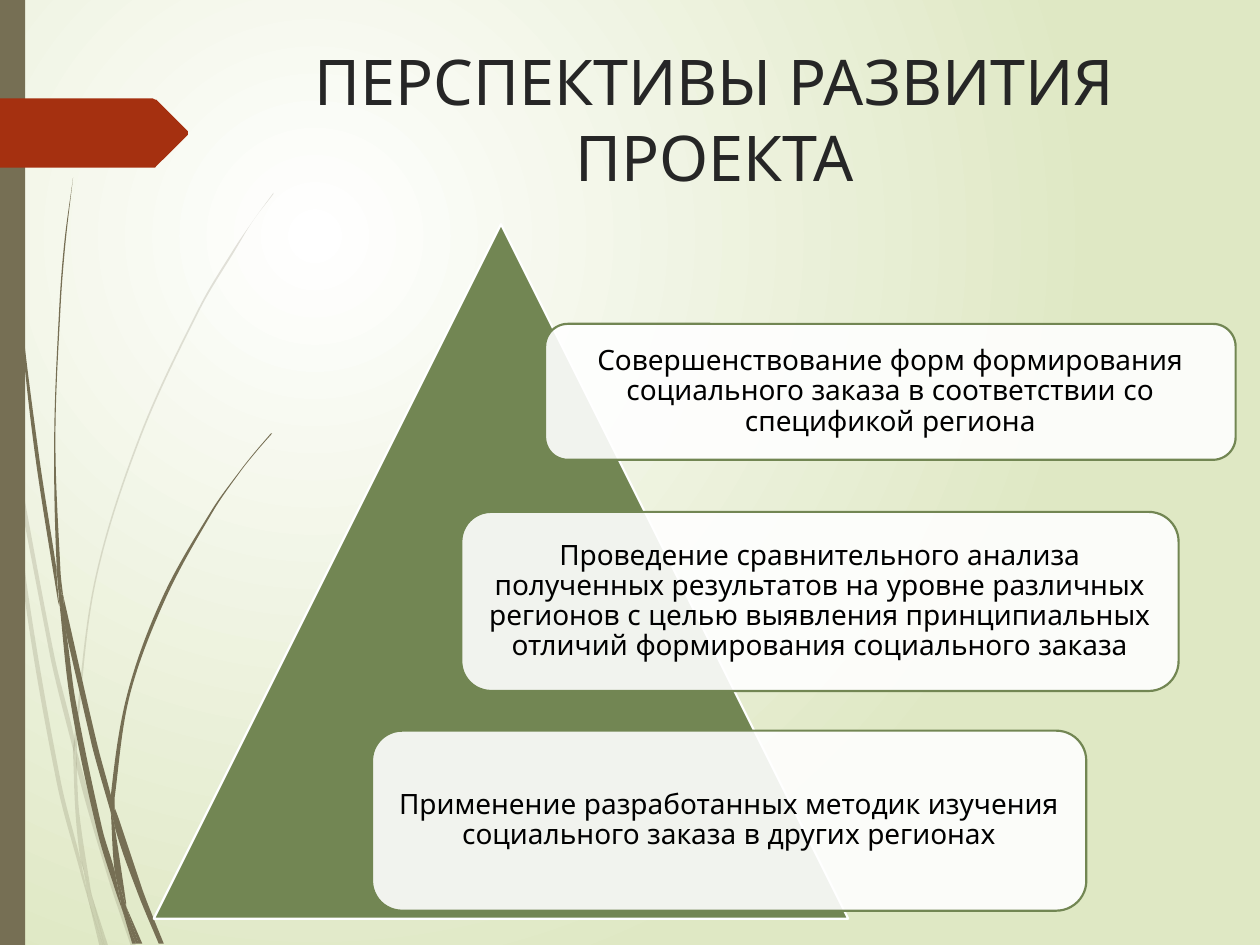
from dataclasses import dataclass
from math import hypot
from typing import Optional

from lxml.etree import Element, SubElement
from pptx import Presentation
from pptx.dml.color import RGBColor
from pptx.enum.shapes import MSO_SHAPE
from pptx.enum.text import MSO_ANCHOR, MSO_AUTO_SIZE, PP_ALIGN
from pptx.oxml.ns import qn
from pptx.util import Cm, Pt

WHITE = RGBColor(0xFF, 0xFF, 0xFF)
BLACK = RGBColor(0x00, 0x00, 0x00)
INK = RGBColor(0x26, 0x26, 0x26)
GREEN = RGBColor(0x72, 0x86, 0x53)
PALE_GREEN = RGBColor(0xDF, 0xE8, 0xC4)
BROWN = RGBColor(0x76, 0x6F, 0x54)
RUST = RGBColor(0xA5, 0x30, 0x10)
FONT = "Quicksand"
FINE = 10
OUTLINE_UNIT = Cm(0.0254)
SMOOTH_TURN = 0.85

Point = tuple[float, float]


@dataclass(frozen=True)
class Box:
    left: float
    top: float
    width: float
    height: float

    def lengths(self) -> tuple[Cm, Cm, Cm, Cm]:
        return Cm(self.left), Cm(self.top), Cm(self.width), Cm(self.height)


@dataclass(frozen=True)
class Card:
    box: Box
    wording: str


PALE_GRASS = [
    [(8, 350), (6, 322), (0, 282), (0, 299), (7, 344)],
    [(40, 522), (59, 599), (59, 586), (43, 520), (10, 345), (12, 376)],
    [(64, 607), (61, 596), (61, 610), (85, 694), (104, 751), (108, 751), (88, 692)],
    [(83, 751), (86, 751), (73, 711)],
    [(64, 683), (48, 619), (22, 469), (12, 376), (8, 350), (19, 470), (45, 621), (64, 693),
     (70, 714), (69, 707)],
    [(58, 599), (60, 646), (64, 683), (67, 692), (73, 711), (72, 706), (63, 646), (61, 610),
     (61, 608)],
    [(61, 584), (76, 462), (111, 349), (159, 245), (187, 198), (201, 175), (217, 154),
     (217, 153), (201, 175), (186, 197), (158, 244), (110, 348), (75, 461), (59, 584),
     (59, 586), (61, 596)],
    [(70, 714), (79, 751), (82, 751)],
    [(61, 608), (61, 610), (61, 596), (59, 586), (58, 599)],
    [(67, 692), (65, 683), (69, 707), (70, 714), (82, 751), (83, 751), (73, 711)],
]
DARK_GRASS = [
    [(5, 110), (14, 233), (27, 355), (46, 477), (47, 481), (45, 457), (45, 453), (30, 355),
     (15, 232), (6, 109), (4, 48), (3, 0), (2, 0), (3, 48)],
    [(73, 592), (88, 645), (88, 633), (88, 631), (77, 590), (50, 472), (53, 505)],
    [(94, 649), (91, 641), (91, 656), (109, 708), (126, 749), (130, 749), (113, 706)],
    [(91, 691), (81, 657), (60, 556), (53, 505), (47, 477), (56, 557), (77, 659), (92, 708),
     (97, 722), (96, 717)],
    [(50, 472), (48, 453), (44, 349), (48, 245), (52, 193), (58, 141), (51, 193), (47, 245),
     (43, 349), (45, 449), (49, 472)],
    [(110, 749), (113, 749), (100, 719)],
    [(47, 477), (53, 505), (50, 472), (49, 472), (45, 449), (45, 453)],
    [(91, 633), (103, 552), (131, 476), (169, 406), (191, 374), (203, 359), (216, 344),
     (215, 344), (203, 358), (191, 373), (168, 405), (129, 474), (101, 551), (88, 631),
     (91, 641)],
    [(97, 722), (105, 749), (108, 749)],
    [(88, 645), (91, 691), (96, 706), (100, 719), (100, 716), (91, 656), (90, 651)],
    [(88, 645), (90, 651), (91, 656), (91, 641), (88, 631), (88, 633)],
    [(96, 706), (91, 691), (96, 717), (97, 722), (108, 749), (110, 749), (100, 719)],
]
RIBBON = [(149, 107), (124, 132), (123, 133), (121, 133), (111, 133), (0, 133), (0, 78),
          (111, 78), (121, 78), (123, 79), (124, 79), (149, 104)]

CARDS = [
    Card(Box(7.5, 14.73, 14.4, 3.63),
         "Применение разработанных методик изучения социального заказа в других регионах"),
    Card(Box(9.3, 10.32, 14.46, 3.61),
         "Проведение сравнительного анализа полученных результатов на уровне различных "
         "регионов с целью выявления принципиальных отличий формирования социального заказа"),
    Card(Box(10.99, 6.53, 13.92, 2.74),
         "Совершенствование форм формирования социального заказа в соответствии со "
         "спецификой региона"),
]


def paint(shape, fill: RGBColor, outline: Optional[RGBColor] = None, opacity: int = 100) -> None:
    shape.shadow.inherit = False
    shape.fill.solid()
    shape.fill.fore_color.rgb = fill
    if opacity < 100:
        color = shape.fill._xPr.find(qn("a:solidFill"))[0]
        SubElement(color, qn("a:alpha")).set("val", str(opacity * 1000))
    if outline is None:
        shape.line.fill.background()
    else:
        shape.line.color.rgb = outline
        shape.line.width = Pt(1.25)


def handle(knot: Point, target: Point, behind: Point) -> Point:
    ahead_x, ahead_y = target[0] - knot[0], target[1] - knot[1]
    back_x, back_y = knot[0] - behind[0], knot[1] - behind[1]
    chord, back = hypot(ahead_x, ahead_y), hypot(back_x, back_y)
    if ahead_x * back_x + ahead_y * back_y < SMOOTH_TURN * chord * back:
        return knot[0] + ahead_x / 3, knot[1] + ahead_y / 3
    run_x, run_y = target[0] - behind[0], target[1] - behind[1]
    reach = chord / 3 / hypot(run_x, run_y)
    return knot[0] + run_x * reach, knot[1] + run_y * reach


def bend(shape) -> None:
    outline = shape._element.find(".//" + qn("a:path"))
    knots = [(int(pt.get("x")), int(pt.get("y"))) for pt in outline.iter(qn("a:pt"))]
    for index, segment in enumerate(outline.findall(qn("a:lnTo")), 1):
        start, end = knots[index - 1], knots[index]
        after = knots[(index + 1) % len(knots)]
        controls = handle(start, end, knots[index - 2]), handle(end, start, after)
        segment.tag = qn("a:cubicBezTo")
        for position, (x, y) in enumerate(controls):
            control = Element(qn("a:pt"), x=str(round(x)), y=str(round(y)))
            segment.insert(position, control)


def draw_outline(slide, points: list[Point], fill: RGBColor, opacity: int = 100):
    first, *rest = [(x * FINE, y * FINE) for x, y in points]
    builder = slide.shapes.build_freeform(*first, scale=OUTLINE_UNIT / FINE)
    builder.add_line_segments(rest, close=True)
    shape = builder.convert_to_shape()
    paint(shape, fill, opacity=opacity)
    return shape


def draw_preset(slide, preset: MSO_SHAPE, box: Box, fill: RGBColor,
                outline: Optional[RGBColor] = None, opacity: int = 100):
    shape = slide.shapes.add_shape(preset, *box.lengths())
    paint(shape, fill, outline, opacity)
    return shape


def write(paragraph, wording: str, size: int, color: RGBColor) -> None:
    paragraph.alignment = PP_ALIGN.CENTER
    run = paragraph.add_run()
    run.text = wording
    run.font.name = FONT
    run.font.size = Pt(size)
    run.font.color.rgb = color


def draw_card(slide, card: Card) -> None:
    shape = draw_preset(slide, MSO_SHAPE.ROUNDED_RECTANGLE, card.box, WHITE, GREEN, 90)
    frame = shape.text_frame
    frame.word_wrap = True
    frame.vertical_anchor = MSO_ANCHOR.MIDDLE
    frame.margin_left = frame.margin_right = frame.margin_top = frame.margin_bottom = Cm(0.17)
    frame.paragraphs[0].line_spacing = 0.9
    write(frame.paragraphs[0], card.wording, 16, BLACK)


def draw_background(slide) -> None:
    fill = slide.background.fill
    fill.gradient()
    for stop, color in zip(fill.gradient_stops, (WHITE, PALE_GREEN)):
        stop.color.rgb = color
    gradient = slide.background._cSld.find(".//" + qn("a:gradFill"))
    gradient.remove(gradient.find(qn("a:lin")))
    circle = SubElement(gradient, qn("a:path"))
    circle.set("path", "circle")
    focus = SubElement(circle, qn("a:fillToRect"))
    for side, value in zip("ltrb", (50000, 50000, 100000, 100000)):
        focus.set(side, str(value))


def draw_title(slide) -> None:
    title = slide.shapes.title
    title.left, title.top, title.width, title.height = Box(3.7, 0.73, 21.41, 3.56).lengths()
    frame = title.text_frame
    frame.word_wrap = True
    frame.auto_size = MSO_AUTO_SIZE.NONE
    frame.vertical_anchor = MSO_ANCHOR.TOP
    write(frame.paragraphs[0], "ПЕРСПЕКТИВЫ РАЗВИТИЯ ПРОЕКТА", 36, INK)


def main() -> None:
    presentation = Presentation()
    presentation.slide_width, presentation.slide_height = Cm(25.4), Cm(19.05)
    slide = presentation.slides.add_slide(presentation.slide_layouts[5])
    draw_background(slide)
    draw_title(slide)
    for grass, opacity in ((PALE_GRASS, 20), (DARK_GRASS, 100)):
        for blade in grass:
            bend(draw_outline(slide, blade, BROWN, opacity))
    draw_preset(slide, MSO_SHAPE.RECTANGLE, Box(0, 0, 0.51, 19.05), BROWN)
    draw_outline(slide, RIBBON, RUST)
    draw_preset(slide, MSO_SHAPE.ISOSCELES_TRIANGLE, Box(3.1, 4.52, 14, 14), GREEN, WHITE)
    for card in CARDS:
        draw_card(slide, card)
    presentation.save("out.pptx")


if __name__ == "__main__":
    main()
